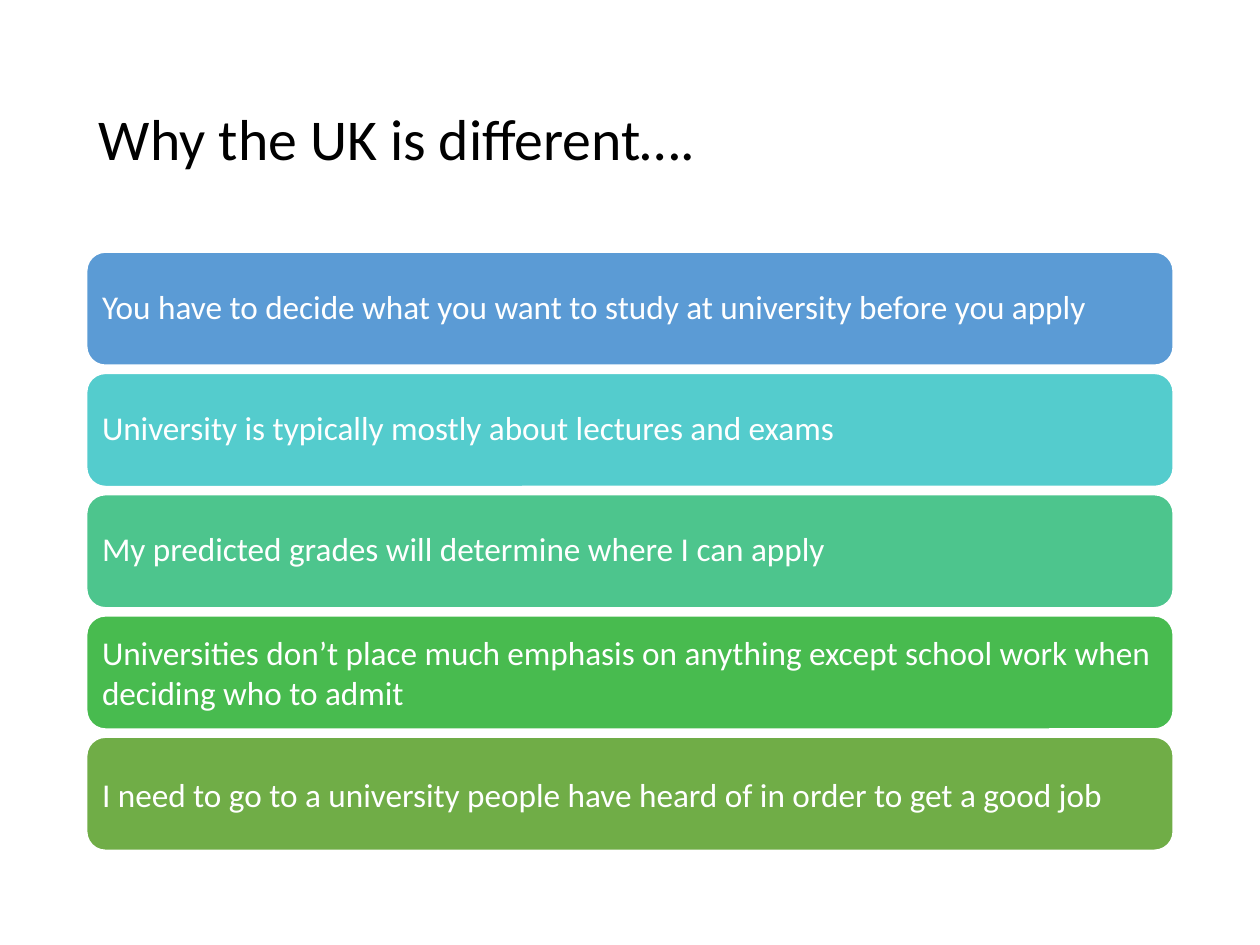
from dataclasses import dataclass

from pptx import Presentation
from pptx.dml.color import RGBColor
from pptx.enum.shapes import MSO_SHAPE
from pptx.enum.text import MSO_ANCHOR, PP_ALIGN
from pptx.util import Pt

ROUNDED = MSO_SHAPE.ROUNDED_RECTANGLE
MIDDLE = MSO_ANCHOR.MIDDLE
LEFT = PP_ALIGN.LEFT


@dataclass(frozen=True)
class Theme:
    font: str = "Calibri"
    title_size: int = 33
    bar_size: int = 19
    ink: str = "000000"
    paper: str = "FFFFFF"
    bars: tuple = ("5B9BD5", "54CCCD", "4DC58D", "48BB4F", "70AD47")


class SlideBuilder:
    def __init__(self, slide, theme):
        self.s = slide
        self.theme = theme

    def set_text(self, sp, text, size, color, spacing):
        tf = sp.text_frame
        tf.word_wrap = True
        tf.vertical_anchor = MIDDLE
        tf.text = text
        p = tf.paragraphs[0]
        p.alignment = LEFT
        p.line_spacing = spacing
        r = p.runs[0]
        r.font.name = self.theme.font
        r.font.size = Pt(size)
        r.font.color.rgb = RGBColor.from_string(color)
        return tf

    def title(self, text, x, y, w, h):
        sp = self.s.shapes.add_textbox(Pt(x), Pt(y), Pt(w), Pt(h))
        self.set_text(sp, text, self.theme.title_size, self.theme.ink, 0.9)

    def bar(self, text, x, y, w, h, fill, spacing):
        sp = self.s.shapes.add_shape(ROUNDED, Pt(x), Pt(y), Pt(w), Pt(h))
        sp.shadow.inherit = False
        sp.fill.solid()
        sp.fill.fore_color.rgb = RGBColor.from_string(fill)
        sp.line.color.rgb = RGBColor.from_string(self.theme.paper)
        sp.line.width = Pt(1)
        tf = self.set_text(sp, text, self.theme.bar_size, self.theme.paper, spacing)
        tf.margin_left = tf.margin_right = Pt(5.7)
        tf.margin_top = tf.margin_bottom = Pt(5.7)


BARS = (
    ("You have to decide what you want to study at university before you apply", 0.9),
    ("University is typically mostly about lectures and exams", 0.9),
    ("My predicted grades will determine where I can apply", 0.9),
    ("Universities don’t place much emphasis on anything except school work "
     "when deciding who to admit", 1.0),
    ("I need to go to a university people have heard of in order to get a good job", 1.0),
)


def main():
    prs = Presentation()
    prs.slide_width, prs.slide_height = Pt(720), Pt(540)
    theme = Theme()
    builder = SlideBuilder(prs.slides.add_slide(prs.slide_layouts[6]), theme)

    left, width = 49.5, 621
    builder.title("Why the UK is different….", left, 28.75, width, 104.4)

    top, height, gap = 144, 64.8, 4.5
    for i, ((text, spacing), fill) in enumerate(zip(BARS, theme.bars)):
        builder.bar(text, left, top + i * (height + gap), width, height, fill, spacing)

    prs.save("out.pptx")


if __name__ == "__main__":
    main()
